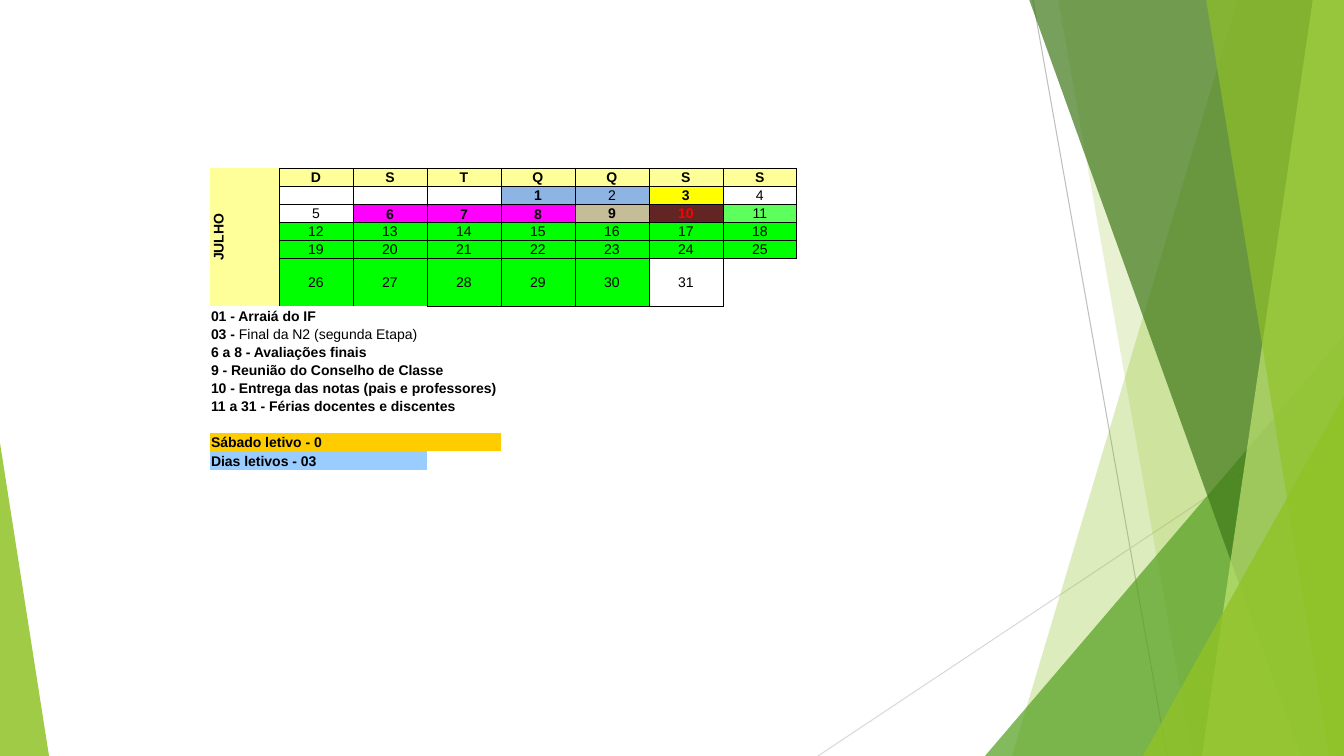
from lxml.etree import SubElement
from pptx import Presentation
from pptx.dml.color import RGBColor
from pptx.enum.shapes import MSO_CONNECTOR, MSO_SHAPE
from pptx.enum.text import MSO_ANCHOR as Anchor, PP_ALIGN as Align
from pptx.oxml.ns import qn
from pptx.util import Emu, Pt

# Calendar content
MONTH = "JULHO"
WEEKDAYS = "DSTQQSS"
FIRST_WEEKDAY = 3
LAST_DAY = 31
BOLD_DAYS = {1, 3, 6, 7, 8, 9, 10}
DAY_FILLS = [  # first day, last day, fill
    (1, 2, "8DB4E2"), (3, 3, "FFFF00"), (6, 8, "FF00FF"), (9, 9, "C4BD97"),
    (10, 10, "632523"), (11, 11, "5CFF5C"), (12, 30, "00FF00"),
]
HEADER_FILL = "FFFF99"
NOTES = [  # table row, columns spanned, fill, runs (text, bold)
    (6, 3, None, [("01 - Arraiá do IF", True)]),
    (7, 6, None, [("03 - ", True), ("Final da N2 (segunda Etapa)", False)]),
    (8, 5, None, [("6 a 8 - Avaliações finais", True)]),
    (9, 7, None, [("9 - Reunião do Conselho de Classe", True)]),
    (10, 8, None, [("10 - Entrega das notas (pais e professores)", True)]),
    (11, 7, None, [("11 a 31 - Férias docentes e discentes", True)]),
    (13, 4, "FFCC00", [("Sábado letivo - 0", True)]),
    (14, 3, "99CCFF", [("Dias letivos - 03", True)]),
]
LEFT = 210
COLUMN_WIDTHS = [69] + [74] * 7 + [86]
ROW_EDGES = [168, 186, 204, 221, 239, 257, 305, 323, 341,
             358, 376, 394, 412, 430, 449, 468, 487]

# Background facets, back to front
WIDTH, HEIGHT = 1344, 756
RAYS = [((1033, 0), (1167, HEIGHT), "BFBFBF"),
        ((WIDTH, 406), (818, HEIGHT), "D9D9D9")]
FACETS = [  # band: top x, bottom x; triangle: box and apex; fill, opacity %
    ("band", (1238, 1012), "90C226", 30),
    ("band", (1058, 1192), "90C226", 20),
    ("triangle", (985, 336, 359, 420, 1), "54A021", 72),
    ("band", (1029, 1301), "3F7819", 70),
    ("band", (1313, 1202), "C0E474", 70),
    ("band", (1206, 1329), "90C226", 65),
    ("triangle", (1143, 396, 201, 360, 1), "90C226", 80),
    ("triangle", (0, 443, 49, 313, 0), "90C226", 85),
]
SCALE = 914400 / 100.8


def px(length):
    return Emu(round(length * SCALE))


def color(code):
    return RGBColor.from_string(code)


def paint(target, code):
    if code:
        target.fill.solid()
        target.fill.fore_color.rgb = color(code)
    else:
        target.fill.background()


prs = Presentation()
prs.slide_width, prs.slide_height = px(WIDTH), px(HEIGHT)
slide = prs.slides.add_slide(prs.slide_layouts[6])
shapes = slide.shapes

# Thin rays
for start, end, code in RAYS:
    ray = shapes.add_connector(MSO_CONNECTOR.STRAIGHT, *map(px, start + end))
    ray.line.color.rgb = color(code)
    ray.line.width = Pt(0.75)
    SubElement(ray.element.spPr, qn("a:effectLst"))

# Translucent facets
for kind, geometry, code, opacity in FACETS:
    if kind == "band":
        top_x, bottom_x = geometry
        outline = shapes.build_freeform(top_x, -1, scale=SCALE)
        outline.add_line_segments([(WIDTH, -1), (WIDTH, HEIGHT), (bottom_x, HEIGHT)])
        facet = outline.convert_to_shape()
    else:
        *box, apex = geometry
        facet = shapes.add_shape(MSO_SHAPE.ISOSCELES_TRIANGLE, *map(px, box))
        facet.adjustments[0] = apex
    paint(facet, code)
    tint = facet.element.spPr.find(".//" + qn("a:srgbClr"))
    SubElement(tint, qn("a:alpha"), val=str(opacity * 1000))
    facet.line.fill.background()
    facet.shadow.inherit = False

# Empty table without a style
row_heights = [bottom - top for top, bottom in zip(ROW_EDGES, ROW_EDGES[1:])]
frame = shapes.add_table(len(row_heights), len(COLUMN_WIDTHS), px(LEFT), px(ROW_EDGES[0]),
                         px(sum(COLUMN_WIDTHS)), px(sum(row_heights)))
calendar = frame.table
calendar.first_row = calendar.horz_banding = False
frame.element.find(".//" + qn("a:tableStyleId")).text = "{2D5ABB26-0587-4C30-8999-92F81FD0307C}"
for column, width in zip(calendar.columns, COLUMN_WIDTHS):
    column.width = px(width)
for row, height in zip(calendar.rows, row_heights):
    row.height = px(height)

# Merged cells
calendar.cell(0, 0).merge(calendar.cell(5, 0))
for row, span, _, _ in NOTES:
    calendar.cell(row, 0).merge(calendar.cell(row, span - 1))

# Contents by position: runs, fill, alignment, anchor, font colour
contents = {(0, 0): ([(MONTH, True)], HEADER_FILL, Align.CENTER, Anchor.MIDDLE, "000000")}
for col, letter in enumerate(WEEKDAYS, 1):
    contents[0, col] = ([(letter, True)], HEADER_FILL, Align.CENTER, Anchor.MIDDLE, "000000")
for day in range(1, LAST_DAY + 1):
    week, weekday = divmod(day - 1 + FIRST_WEEKDAY, 7)
    fill = next((code for first, last, code in DAY_FILLS if first <= day <= last), "FFFFFF")
    anchor = Anchor.BOTTOM if 6 <= day <= 8 else Anchor.MIDDLE
    ink = "FF0000" if day == 10 else "000000"
    contents[week + 1, weekday + 1] = ([(str(day), day in BOLD_DAYS)], fill,
                                       Align.CENTER, anchor, ink)
for row, _, fill, runs in NOTES:
    anchor = Anchor.MIDDLE if fill else Anchor.BOTTOM
    contents[row, 0] = (runs, fill, Align.LEFT, anchor, "000000")


def boxed(row, col):
    return 0 <= row <= 5 and 1 <= col <= 7 and (row, col) != (5, 7)


def draw_borders(cell, row, col):
    sides = {"L": (row, col - 1), "R": (row, col + 1), "T": (row - 1, col), "B": (row + 1, col)}
    for side, neighbour in sides.items():
        edge = SubElement(cell._tc.get_or_add_tcPr(), qn("a:ln" + side), w=str(Pt(0.5)))
        if boxed(row, col) or boxed(*neighbour):
            SubElement(SubElement(edge, qn("a:solidFill")), qn("a:srgbClr"), val="000000")
        else:
            SubElement(edge, qn("a:noFill"))


# Borders, fills and text
for row in range(len(row_heights)):
    for col in range(len(COLUMN_WIDTHS)):
        cell = calendar.cell(row, col)
        if cell.is_spanned:
            continue
        blank_fill = "FFFFFF" if boxed(row, col) else None
        runs, fill, align, anchor, ink = contents.get(
            (row, col), ([], blank_fill, Align.LEFT, Anchor.MIDDLE, "000000"))
        draw_borders(cell, row, col)
        paint(cell, fill)
        cell.margin_left = cell.margin_right = cell.margin_top = px(1)
        cell.margin_bottom = 0
        cell.vertical_anchor = anchor
        line = cell.text_frame.paragraphs[0]
        line.alignment = align
        for words, bold in runs:
            run = line.add_run()
            run.text = words
            run.font.name, run.font.size, run.font.bold = "Arial", Pt(10), bold
            run.font.color.rgb = color(ink)
        if not runs:
            SubElement(line._p, qn("a:endParaRPr"), sz="1000")
calendar.cell(0, 0)._tc.tcPr.set("vert", "vert270")

prs.save("out.pptx")
